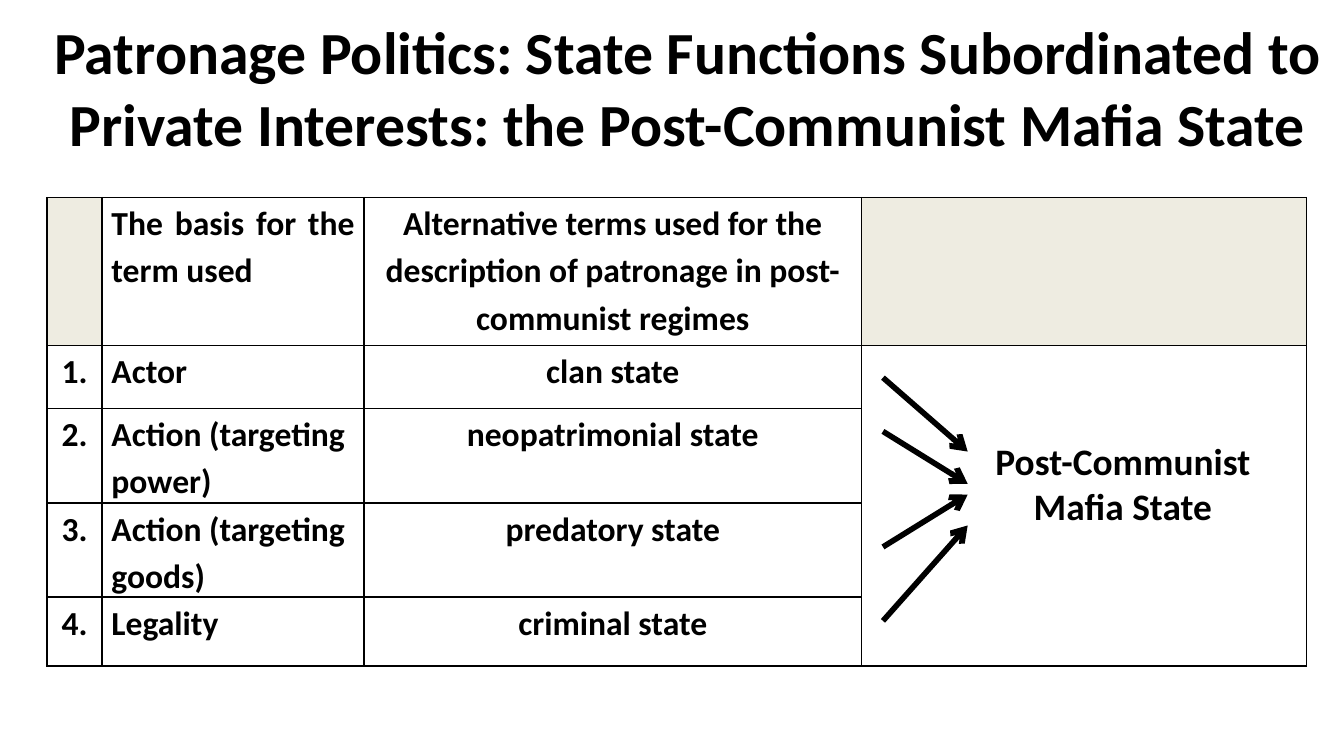
from lxml import etree
from pptx import Presentation
from pptx.dml.color import RGBColor
from pptx.enum import shapes, text
from pptx.oxml import ns
from pptx.util import Inches, Pt

BLACK, BEIGE = "000000", "EEECE1"
LEFT, MID, JUST = text.PP_ALIGN.LEFT, text.PP_ALIGN.CENTER, text.PP_ALIGN.JUSTIFY


def style(par, size, align, space=1.0):
    par.alignment = align
    par.line_spacing = space
    for run in par.runs:
        run.font.name = "Calibri"
        run.font.size = Pt(size)
        run.font.bold = True
        run.font.color.rgb = RGBColor.from_string(BLACK)


def border(cell):
    props = cell._tc.get_or_add_tcPr()
    for i, side in enumerate("LRTB"):
        line = etree.Element(ns.qn(f"a:ln{side}"), w=str(Pt(1)))
        fill = etree.SubElement(line, ns.qn("a:solidFill"))
        etree.SubElement(fill, ns.qn("a:srgbClr"), val=BLACK)
        props.insert(i, line)


prs = Presentation()
prs.slide_width = Inches(10)
prs.slide_height = prs.slide_width * 9 // 16
slide = prs.slides.add_slide(prs.slide_layouts[5])

title = slide.shapes.title
title.left, title.top = Inches(0.12), Inches(0.06)
title.width, title.height = Inches(10), Inches(1.1)
frame = title.text_frame
frame.text = ("Patronage Politics: State Functions Subordinated to "
              "Private Interests: the Post-Communist Mafia State")
frame.auto_size = text.MSO_AUTO_SIZE.NONE
frame.vertical_anchor = text.MSO_ANCHOR.TOP
style(frame.paragraphs[0], 32, MID)

# Table of terms
rows = [
    ("", "The basis for the term used",
     "Alternative terms used for the description of patronage "
     "in post-communist regimes", ""),
    ("1.", "Actor", "clan state", "Post-Communist\nMafia State"),
    ("2.", "Action (targeting power)", "neopatrimonial state", ""),
    ("3.", "Action (targeting goods)", "predatory state", ""),
    ("4.", "Legality", "criminal state", ""),
]
widths = [0.41, 1.95, 3.7, 3.31]
heights = [1.1, 0.47, 0.7, 0.7, 0.51]
table = slide.shapes.add_table(
    len(rows), len(widths), Inches(0.35), Inches(1.47),
    Inches(sum(widths)), Inches(sum(heights))).table
for col, width in zip(table.columns, widths):
    col.width = Inches(width)
for row, height in zip(table.rows, heights):
    row.height = Inches(height)

for r, row in enumerate(rows):
    for c, words in enumerate(row):
        cell = table.cell(r, c)
        cell.margin_left = cell.margin_right = Inches(0.07)
        cell.margin_top = cell.margin_bottom = 0
        if r == 0 and c in (0, 3):
            cell.fill.solid()
            cell.fill.fore_color.rgb = RGBColor.from_string(BEIGE)
        else:
            cell.fill.background()
        border(cell)
        cell.text_frame.text = words
        align = MID if c != 1 else LEFT if r else JUST
        for par in cell.text_frame.paragraphs:
            style(par, 18, align, 1.15)

# The last column joins the four terms into one result
result = table.cell(1, 3)
result.merge(table.cell(4, 3))
result.margin_left, result.margin_top = Inches(0.65), Inches(0.65)
first, last = result.text_frame.paragraphs
style(first, 20, MID, 1.15)
style(last, 20, MID)

# Arrows from the terms to the result
for start, end in [(2.81, 3.36), (3.21, 3.6), (4.07, 3.68), (4.62, 3.91)]:
    arrow = slide.shapes.add_connector(
        shapes.MSO_CONNECTOR.STRAIGHT,
        Inches(6.57), Inches(start), Inches(7.2), Inches(end))
    arrow.line.width = Pt(3)
    arrow.line.color.rgb = RGBColor.from_string(BLACK)
    etree.SubElement(arrow.line._get_or_add_ln(), ns.qn("a:tailEnd"), type="arrow")
    etree.SubElement(arrow._element.spPr, ns.qn("a:effectLst"))

prs.save("out.pptx")
